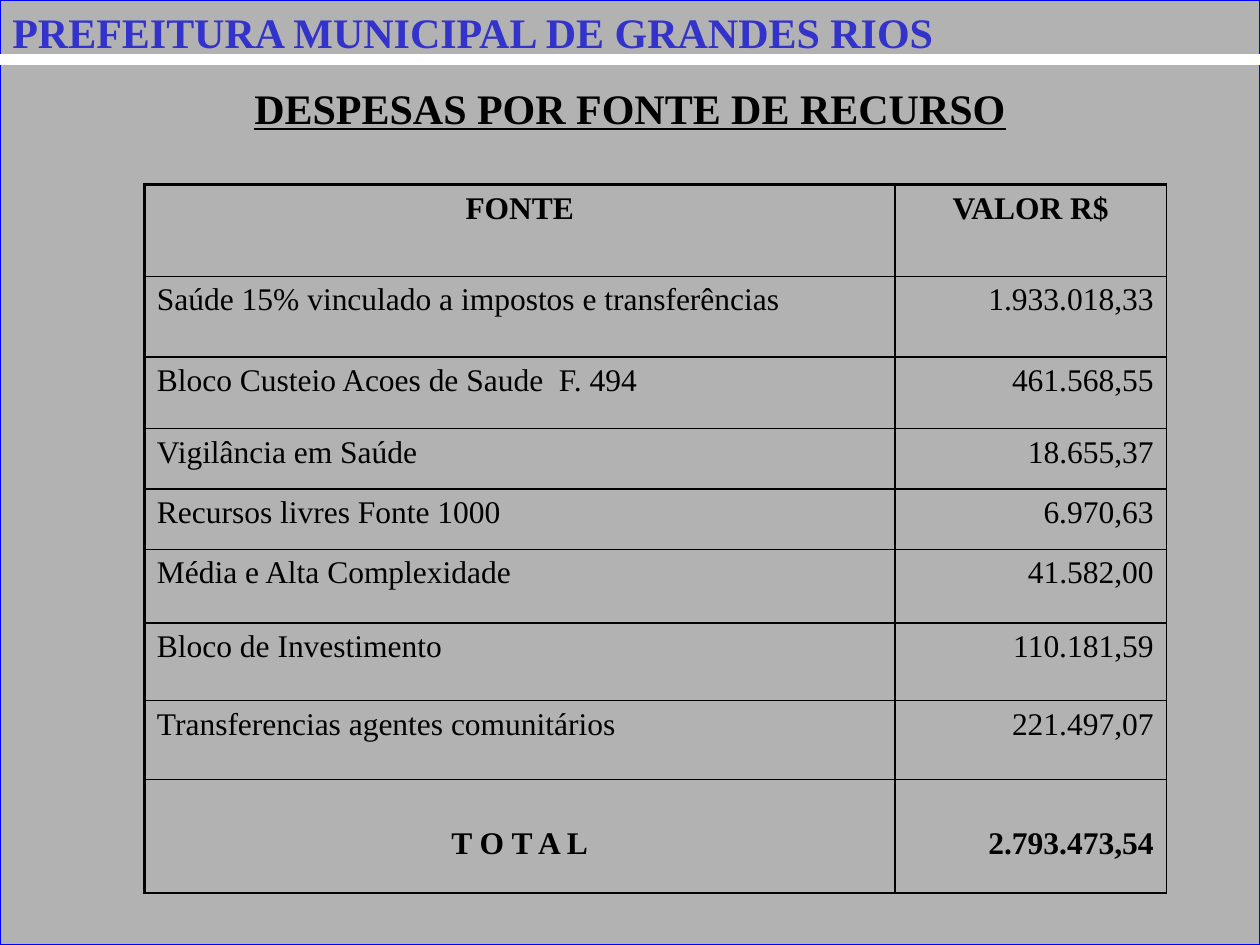
from lxml.etree import SubElement
from pptx import Presentation
from pptx.dml.color import RGBColor
from pptx.enum.shapes import MSO_CONNECTOR, MSO_SHAPE
from pptx.enum.text import PP_ALIGN as Align
from pptx.oxml.ns import qn
from pptx.util import Pt

BLACK = RGBColor(0x00, 0x00, 0x00)
WHITE = RGBColor(0xFF, 0xFF, 0xFF)
GREY = RGBColor(0xB2, 0xB2, 0xB2)
SHADOW = RGBColor(0x80, 0x80, 0x80)
BLUE = RGBColor(0x00, 0x00, 0xFF)
TITLE_BLUE = RGBColor(0x33, 0x33, 0xCC)

ROWS = [
    ("FONTE", "VALOR R$", 52.5),
    ("Saúde 15% vinculado a impostos e transferências", "1.933.018,33", 46),
    ("Bloco Custeio Acoes de Saude  F. 494", "461.568,55", 41),
    ("Vigilância em Saúde", "18.655,37", 34.5),
    ("Recursos livres Fonte 1000", "6.970,63", 34.5),
    ("Média e Alta Complexidade", "41.582,00", 42),
    ("Bloco de Investimento", "110.181,59", 44.5),
    ("Transferencias agentes comunitários", "221.497,07", 45),
    ("T O T A L", "2.793.473,54", 65),
]
COLUMN_WIDTHS = [429, 155]


def write(frame, text, align, color=BLACK, **formats):
    para = frame.paragraphs[0]
    para.alignment = align
    span = para.add_run()
    span.text = text
    span.font.color.rgb = color
    for name, value in {"name": "Times New Roman", **formats}.items():
        setattr(span.font, name, value)
    return span


def set_borders(cell, widths):
    """Draw black cell borders; widths maps L, R, T and B to points."""
    properties = cell._tc.get_or_add_tcPr()
    for position, (side, width) in enumerate(widths.items()):
        line = properties.makeelement(qn(f"a:ln{side}"), {"w": str(Pt(width))})
        fill = SubElement(line, qn("a:solidFill"))
        SubElement(fill, qn("a:srgbClr"), val=str(BLACK))
        properties.insert(position, line)


deck = Presentation()
deck.slide_width, deck.slide_height = Pt(720), Pt(540)
slide = deck.slides.add_slide(deck.slide_layouts[6])
shapes = slide.shapes

# Background panel and white rule
panel = shapes.add_shape(MSO_SHAPE.RECTANGLE, 0, 0, Pt(720), Pt(540))
panel.shadow.inherit = False
panel.fill.solid()
panel.fill.fore_color.rgb = GREY
panel.line.color.rgb = BLUE
panel.line.width = Pt(0.75)

rule = shapes.add_connector(MSO_CONNECTOR.STRAIGHT, 0, Pt(34), Pt(720), Pt(34))
rule.line.color.rgb = WHITE
rule.line.width = Pt(6)
SubElement(rule._element.spPr, qn("a:effectLst"))

# Heading and municipality name
heading_box = shapes.add_textbox(Pt(45), Pt(29), Pt(630), Pt(49))
heading_box.text_frame.word_wrap = True
write(heading_box.text_frame, "DESPESAS POR FONTE DE RECURSO", Align.CENTER,
      size=Pt(24), bold=True, underline=True)
heading_box.text_frame.paragraphs[0].line_spacing = 1.5

name_box = shapes.add_textbox(0, 0, Pt(593), Pt(36))
name_box.text_frame.word_wrap = True
name_span = write(name_box.text_frame, "PREFEITURA MUNICIPAL DE GRANDES RIOS",
                  Align.LEFT, TITLE_BLUE, size=Pt(24), bold=True)
name_properties = name_span.font._element
effects = name_properties.makeelement(qn("a:effectLst"), {})
name_properties.find(qn("a:solidFill")).addnext(effects)
shadow = SubElement(effects, qn("a:outerShdw"), dist=str(Pt(2)), dir="2700000")
SubElement(shadow, qn("a:srgbClr"), val=str(SHADOW))

# Spending table
frame = shapes.add_table(len(ROWS), len(COLUMN_WIDTHS), Pt(82.5), Pt(105.5),
                         Pt(sum(COLUMN_WIDTHS)), Pt(sum(row[2] for row in ROWS)))
table = frame.table
for column, width in zip(table.columns, COLUMN_WIDTHS):
    column.width = Pt(width)

last = len(ROWS) - 1
for r, (source, value, height) in enumerate(ROWS):
    table.rows[r].height = Pt(height)
    source_align = Align.CENTER if r in (0, last) else Align.LEFT
    value_align = Align.CENTER if r == 0 else Align.RIGHT
    for c, (text, align) in enumerate([(source, source_align), (value, value_align)]):
        cell = table.cell(r, c)
        cell.fill.background()
        if r == last:
            cell.margin_top = Pt(27)
        write(cell.text_frame, text, align, size=Pt(18), bold=r in (0, last))
        set_borders(cell, {"L": 2.25 if c == 0 else 1, "R": 1,
                           "T": 2.25 if r == 0 else 1, "B": 1})

deck.save("out.pptx")
